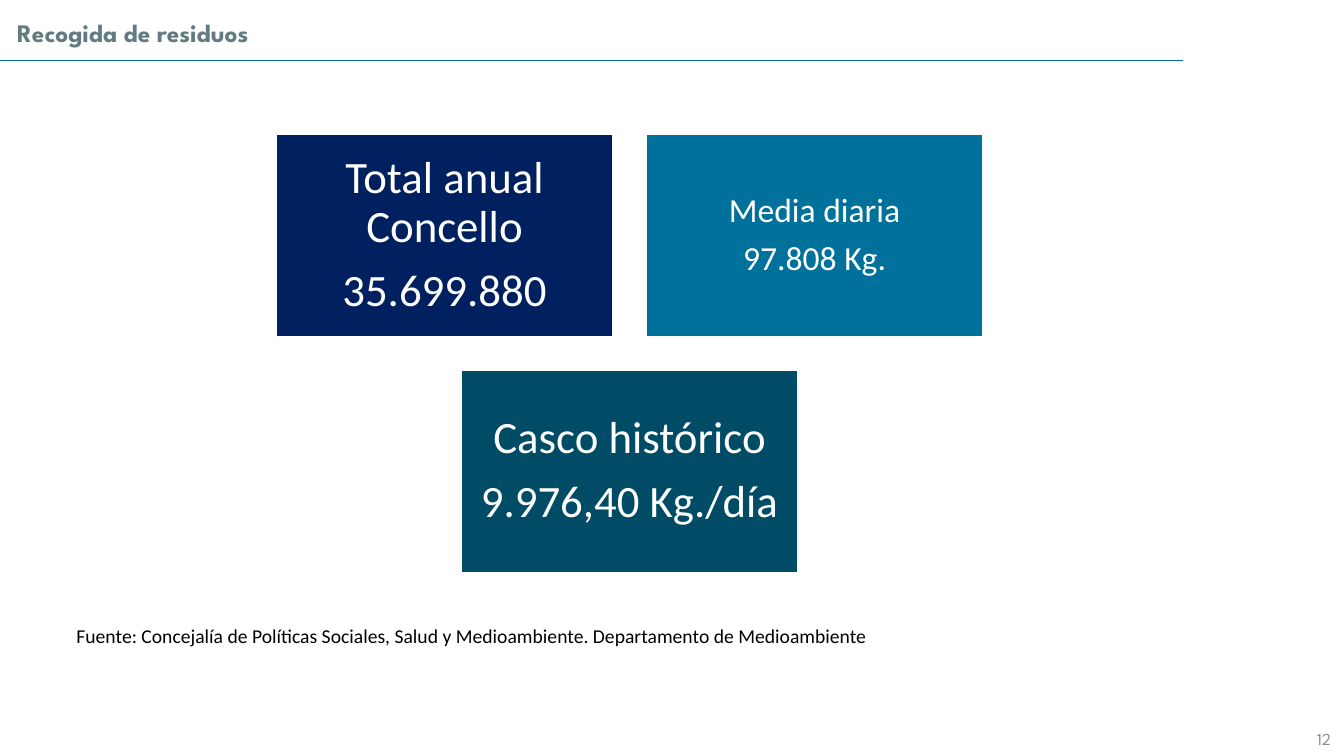
from pptx import Presentation
from pptx.dml.color import RGBColor
from pptx.enum.shapes import MSO_CONNECTOR, MSO_SHAPE
from pptx.enum.text import MSO_ANCHOR, PP_ALIGN
from pptx.oxml.ns import qn
from pptx.util import Inches, Pt
from lxml.etree import SubElement

CARD_WIDTH, CARD_HEIGHT, GAP = 3.34, 2.01, 0.33
CARDS = [
    (0, 0, "002060", 32, 0.13, ["Total anual Concello", "35.699.880"]),
    (1, 0, "00719A", 24, 0.1, ["Media diaria", "97.808 Kg."]),
    (0.5, 1, "004B66", 32, 0.13, ["Casco histórico", "9.976,40 Kg./día"]),
]


def color(value):
    return RGBColor.from_string(value)


def write(paragraph, text, size, font_name, font_color, bold=False):
    paragraph.text = text
    font = paragraph.runs[0].font
    font.size = Pt(size)
    font.name = font_name
    font.bold = bold
    font.color.rgb = color(font_color)


def add_label(slide, left, top, width, height, text, size, font_name, font_color,
              alignment=PP_ALIGN.LEFT, anchor=MSO_ANCHOR.TOP):
    label = slide.shapes.add_textbox(Inches(left), Inches(top), Inches(width), Inches(height))
    frame = label.text_frame
    frame.word_wrap = True
    frame.vertical_anchor = anchor
    paragraph = frame.paragraphs[0]
    paragraph.alignment = alignment
    write(paragraph, text, size, font_name, font_color)


def add_header(slide, left, top, width, height):
    rule_top = Inches(top + 0.41)
    rule = slide.shapes.add_connector(MSO_CONNECTOR.STRAIGHT, 0, rule_top, Inches(11.73), rule_top)
    rule.line.color.rgb = color("00719A")
    rule.line.width = Pt(1)
    SubElement(rule._element.spPr, qn("a:effectLst"))

    table = slide.shapes.add_table(
        1, 1, Inches(left), Inches(top), Inches(width), Inches(height)).table
    table.first_row = False
    table.horz_banding = False
    cell = table.cell(0, 0)
    cell.fill.solid()
    cell.fill.fore_color.rgb = color("FFFFFF")
    cell.vertical_anchor = MSO_ANCHOR.MIDDLE
    cell.margin_left = cell.margin_right = Inches(0.05)
    cell.margin_top = cell.margin_bottom = 0
    paragraph = cell.text_frame.paragraphs[0]
    paragraph.line_spacing = 1.15
    paragraph.space_after = Pt(10)
    write(paragraph, "Recogida de residuos", 18, "League Spartan", "637B7F", bold=True)


def add_card(group, left, top, fill, size, margin, lines):
    card = group.shapes.add_shape(
        MSO_SHAPE.RECTANGLE, Inches(left), Inches(top), Inches(CARD_WIDTH), Inches(CARD_HEIGHT))
    card.shadow.inherit = False
    card.fill.solid()
    card.fill.fore_color.rgb = color(fill)
    card.line.color.rgb = color("FFFFFF")
    card.line.width = Pt(1)
    frame = card.text_frame
    frame.word_wrap = True
    frame.vertical_anchor = MSO_ANCHOR.MIDDLE
    frame.margin_left = frame.margin_right = Inches(margin)
    frame.margin_top = frame.margin_bottom = Inches(margin)
    frame.text = "\n".join(lines)
    for paragraph, line in zip(frame.paragraphs, lines):
        paragraph.alignment = PP_ALIGN.CENTER
        paragraph.line_spacing = 0.9
        paragraph.space_after = Pt(round(size * 0.35))
        write(paragraph, line, size, "Calibri", "FFFFFF")


def add_cards(slide, left, top):
    group = slide.shapes.add_group_shape()
    for column, row, *details in CARDS:
        add_card(group, left + column * (CARD_WIDTH + GAP),
                 top + row * (CARD_HEIGHT + GAP), *details)


def main():
    presentation = Presentation()
    presentation.slide_width = Inches(13.33)
    presentation.slide_height = Inches(7.5)
    slide = presentation.slides.add_slide(presentation.slide_layouts[6])
    add_header(slide, 0.12, 0.19, 8.14, 0.31)
    add_cards(slide, 2.74, 1.33)
    add_label(slide, 0.66, 6.14, 11.64, 0.34,
              "Fuente: Concejalía de Políticas Sociales, Salud y Medioambiente. "
              "Departamento de Medioambiente", 14, "Calibri", "000000")
    add_label(slide, 10.3, 7.08, 3, 0.4, "12", 12, "League Spartan", "8C8C8C",
              PP_ALIGN.RIGHT, MSO_ANCHOR.BOTTOM)
    presentation.save("out.pptx")


if __name__ == "__main__":
    main()
